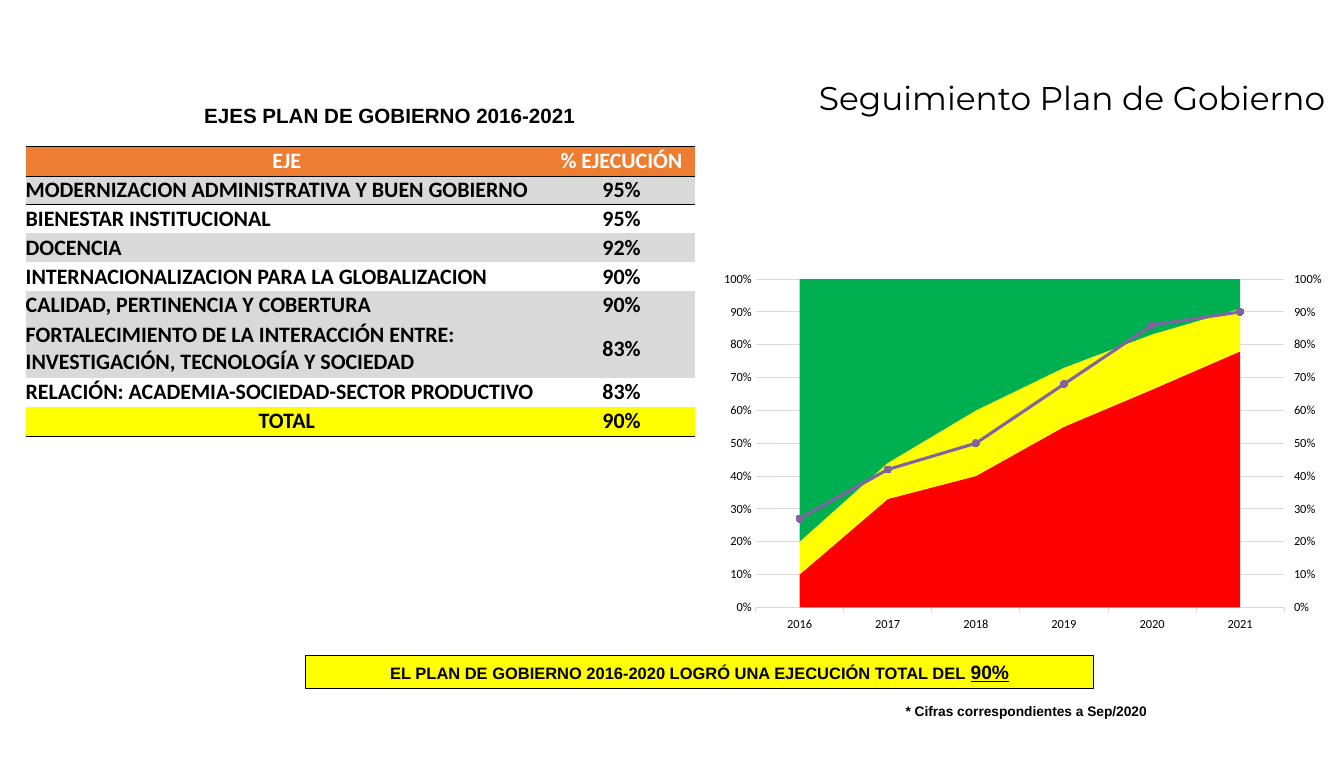
from copy import deepcopy

from pptx import Presentation
from pptx import util as u
from pptx.chart.axis import CategoryAxis, ValueAxis
from pptx.chart.data import CategoryChartData
from pptx.dml.color import RGBColor
from pptx.enum import chart as charts, shapes, text
from pptx.oxml import ns, parse_xml

PX = 9144
COLORS = {
    "black": "000000", "white": "FFFFFF", "orange": "ED7D31", "gray": "D9D9D9",
    "yellow": "FFFF00", "red": "FF0000", "green": "00B050", "purple": "8064A2",
}
LEFT, CENTER, RIGHT = text.PP_ALIGN.LEFT, text.PP_ALIGN.CENTER, text.PP_ALIGN.RIGHT
NO_STYLE = "{2D5ABB26-0587-4C30-8999-92F81FD0307C}"

AXES = [
    ("EJE", "% EJECUCIÓN", "orange", 30),
    ("MODERNIZACION ADMINISTRATIVA Y BUEN GOBIERNO", "95%", "gray", 29),
    ("BIENESTAR INSTITUCIONAL", "95%", None, 29),
    ("DOCENCIA", "92%", "gray", 29),
    ("INTERNACIONALIZACION PARA LA GLOBALIZACION", "90%", None, 29),
    ("CALIDAD, PERTINENCIA Y COBERTURA", "90%", "gray", 29),
    ("FORTALECIMIENTO DE LA INTERACCIÓN ENTRE: INVESTIGACIÓN, TECNOLOGÍA Y SOCIEDAD",
     "83%", "gray", 59),
    ("RELACIÓN: ACADEMIA-SOCIEDAD-SECTOR PRODUCTIVO", "83%", None, 29),
    ("TOTAL", "90%", "yellow", 30),
]
YEARS = ["2016", "2017", "2018", "2019", "2020", "2021"]
BANDS = [
    ("red", [10, 33, 40, 55, 67, 78]),
    ("yellow", [10, 11, 20, 18, 17, 13]),
    ("green", [80, 56, 40, 27, 17, 9]),
]
PROGRESS = [0.27, 0.42, 0.5, 0.68, 0.86, 0.9]


def px(*lengths):
    return [u.Emu(length * PX) for length in lengths]


def color(name):
    return RGBColor.from_string(COLORS[name])


def set_font(font, size, name, ink="black", bold=False):
    font.size = u.Pt(size)
    font.name = name
    font.bold = bold
    font.color.rgb = color(ink)


def set_line(line, name, width):
    line.color.rgb = color(name)
    line.width = u.Pt(width)


def add_label(page, place, words, size, align, name="Arial", bold=True, insets=(7, 4), wrap=True):
    frame = page.shapes.add_textbox(*px(*place)).text_frame
    frame.word_wrap = wrap
    frame.margin_left = frame.margin_right = px(insets[0])[0]
    frame.margin_top = frame.margin_bottom = px(insets[1])[0]
    para = frame.paragraphs[0]
    para.text = words
    para.alignment = align
    set_font(para.font, size, name, bold=bold)


def add_banner(page, place, spans):
    box = page.shapes.add_shape(shapes.MSO_SHAPE.RECTANGLE, *px(*place))
    box.shadow.inherit = False
    box.fill.solid()
    box.fill.fore_color.rgb = color("yellow")
    set_line(box.line, "black", 0.75)
    box.text_frame.word_wrap = True
    para = box.text_frame.paragraphs[0]
    para.alignment = CENTER
    for words, size, underline in spans:
        span = para.add_run()
        span.text = words
        set_font(span.font, size, "Arial", bold=True)
        span.font.underline = underline


def add_border(cell, side):
    cell._tc.get_or_add_tcPr().insert(0, parse_xml(
        f'<a:{side} {ns.nsdecls("a")} w="12700"><a:solidFill>'
        f'<a:srgbClr val="{COLORS["black"]}"/></a:solidFill></a:{side}>'))


def fill_cell(cell, words, fill, align, ink):
    cell.margin_left = cell.margin_right = cell.margin_top = cell.margin_bottom = 0
    cell.vertical_anchor = text.MSO_ANCHOR.MIDDLE
    if fill:
        cell.fill.solid()
        cell.fill.fore_color.rgb = color(fill)
    else:
        cell.fill.background()
    para = cell.text_frame.paragraphs[0]
    para.text = words
    para.alignment = align
    set_font(para.font, 16, "Calibri", ink, True)


def add_axes_table(page, left, top, widths):
    height = sum(row[3] for row in AXES)
    table = page.shapes.add_table(
        len(AXES), len(widths), *px(left, top, sum(widths), height)).table
    table.first_row = table.horz_banding = False
    table._tbl.tblPr.find(ns.qn("a:tableStyleId")).text = NO_STYLE
    for column, width in zip(table.columns, widths):
        column.width = px(width)[0]
    last = len(AXES) - 1
    for index, (axis, share, fill, row_height) in enumerate(AXES):
        table.rows[index].height = px(row_height)[0]
        align = CENTER if index in (0, last) else LEFT
        ink = "black" if index else "white"
        for column, (words, side) in enumerate([(axis, align), (share, CENTER)]):
            cell = table.cell(index, column)
            fill_cell(cell, words, fill, side, ink)
            if index in (0, last):
                add_border(cell, "lnB")
            if index in (0, 1):
                add_border(cell, "lnT")


def set_value(element, tag, value):
    element.find(ns.qn(tag)).set("val", value)


def add_second_axes(chart):
    plot_area = chart._chartSpace.chart.plotArea
    series = plot_area.findall(".//" + ns.qn("c:ser"))[-1]
    line_chart = parse_xml(
        f'<c:lineChart {ns.nsdecls("c")}><c:grouping val="stacked"/><c:varyColors val="0"/>'
        '<c:marker val="1"/><c:axId val="5001"/><c:axId val="5002"/></c:lineChart>')
    line_chart.insert(2, series)
    plot_area.find(ns.qn("c:areaChart")).addnext(line_chart)

    bottom = deepcopy(chart.category_axis._element)
    right = deepcopy(chart.value_axis._element)
    chart.value_axis._element.addnext(bottom)
    bottom.addnext(right)
    for axis, own, other in [(bottom, "5001", "5002"), (right, "5002", "5001")]:
        set_value(axis, "c:axId", own)
        set_value(axis, "c:crossAx", other)
    set_value(right, "c:axPos", "r")
    set_value(right, "c:crosses", "max")
    CategoryAxis(bottom).visible = False
    right_axis = ValueAxis(right)
    right_axis.has_major_gridlines = False
    right_axis.major_tick_mark = charts.XL_TICK_MARK.OUTSIDE
    right_axis.minimum_scale, right_axis.maximum_scale = 0, 1


def set_plot_layout(chart, left, top, width, height):
    plot_area = chart._chartSpace.chart.plotArea
    for layout in plot_area.findall(ns.qn("c:layout")):
        plot_area.remove(layout)
    plot_area.insert(0, parse_xml(
        f'<c:layout {ns.nsdecls("c")}><c:manualLayout><c:layoutTarget val="inner"/>'
        '<c:xMode val="edge"/><c:yMode val="edge"/>'
        f'<c:x val="{left}"/><c:y val="{top}"/><c:w val="{width}"/><c:h val="{height}"/>'
        '</c:manualLayout></c:layout>'))


def add_progress_chart(page, place):
    data = CategoryChartData()
    data.categories = YEARS
    for number, values in enumerate([values for _, values in BANDS] + [PROGRESS], 1):
        data.add_series(f"Series {number}", values)
    chart = page.shapes.add_chart(
        charts.XL_CHART_TYPE.AREA_STACKED_100, *px(*place), data).chart
    chart.has_legend = chart.has_title = False
    set_font(chart.font, 10, "Calibri")

    years, shares = chart.category_axis, chart.value_axis
    for axis in (years, shares):
        set_font(axis.tick_labels.font, 9, "Calibri")
    years.has_major_gridlines = False
    years.major_tick_mark = charts.XL_TICK_MARK.OUTSIDE
    set_line(years.format.line, "gray", 0.75)
    shares.has_major_gridlines = True
    set_line(shares.major_gridlines.format.line, "gray", 0.75)
    shares.major_tick_mark = charts.XL_TICK_MARK.NONE
    shares.major_unit = 0.1
    shares.format.line.fill.background()
    shares.tick_labels.number_format = "0%"
    shares.tick_labels.number_format_is_linked = False
    set_value(shares._element, "c:crossBetween", "between")

    add_second_axes(chart)
    set_plot_layout(chart, 0.07, 0.04, 0.85, 0.88)
    bands, progress = chart.plots
    bands.vary_by_categories = False
    for series, (name, _) in zip(bands.series, BANDS):
        series.format.fill.solid()
        series.format.fill.fore_color.rgb = color(name)
    line = progress.series[0]
    line.smooth = False
    set_line(line.format.line, "purple", 2.25)
    line.marker.style = charts.XL_MARKER_STYLE.CIRCLE
    line.marker.size = 5
    line.marker.format.fill.solid()
    line.marker.format.fill.fore_color.rgb = color("purple")
    set_line(line.marker.format.line, "purple", 0.75)


def main():
    deck = Presentation()
    deck.slide_width, deck.slide_height = px(1359, 768)
    page = deck.slides.add_slide(deck.slide_layouts[6])
    add_label(page, (59, 74, 1291, 50), "Seguimiento Plan de Gobierno", 23.9, RIGHT,
              "Montserrat", False, (10, 5))
    add_banner(page, (309, 662, 797, 34), [
        ("EL PLAN DE GOBIERNO 2016-2020 LOGRÓ UNA EJECUCIÓN TOTAL DEL ", 12, False),
        ("90%", 14, True)])
    add_label(page, (907, 706, 261, 24), "* Cifras correspondientes a Sep/2020", 10, CENTER,
              wrap=False)
    add_label(page, (183, 100, 422, 33), "EJES PLAN DE GOBIERNO 2016-2021", 15, CENTER)
    add_progress_chart(page, (720, 267, 629, 377))
    add_axes_table(page, 26, 148, (528, 149))
    deck.save("out.pptx")


if __name__ == "__main__":
    main()
